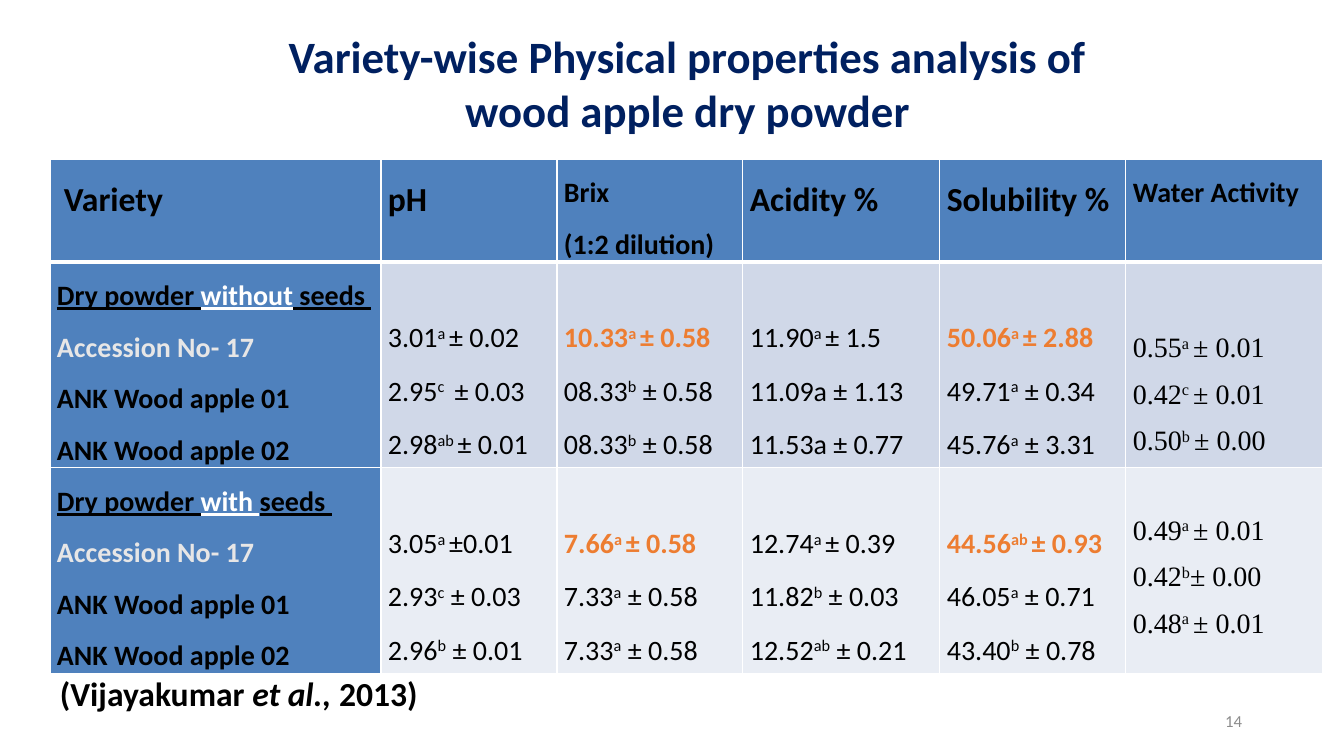
from dataclasses import dataclass

from lxml import etree
from pptx import Presentation
from pptx import util as u
from pptx.dml.color import RGBColor
from pptx.enum import text
from pptx.oxml import ns

EMU_PER_PX = 914400 / 100.8


@dataclass(frozen=True)
class Theme:
    font: str = "Calibri"
    serif: str = "Times New Roman"
    ink: str = "000000"
    white: str = "FFFFFF"
    navy: str = "002060"
    blue: str = "4F81BD"
    bands: tuple = ("D0D8E8", "E9EDF4")
    pale: str = "E7E6E6"
    orange: str = "ED7D31"
    grey: str = "8C8C8C"
    title: int = 32
    large: int = 24
    body: int = 20
    small: int = 12


THEME = Theme()
COLUMN_WIDTHS = (331, 176, 186, 197, 186, 197)
ROW_HEIGHTS = (101, 201, 201)
HEADERS = (
    (["Variety"], THEME.large, 14),
    (["pH"], THEME.large, 7),
    (["Brix", "(1:2 dilution)"], THEME.body, 7),
    (["Acidity %"], THEME.large, 7),
    (["Solubility %"], THEME.large, 7),
    (["Water Activity"], THEME.body, 7),
)
VARIETIES = (
    ("Accession No- 17", THEME.pale),
    ("ANK Wood apple 01", THEME.ink),
    ("ANK Wood apple 02", THEME.ink),
)
HIGHLIGHTED = (1, 3)
GROUPS = (
    (
        ("Dry powder ", "without", " seeds "),
        (
            ("3.01^a ^± 0.02", "2.95^c ^ ± 0.03", "2.98^ab ^± 0.01"),
            ("10.33^a ^± 0.58", "08.33^b^ ± 0.58", "08.33^b^ ± 0.58"),
            ("11.90^a ^± 1.5", "11.09a ± 1.13", "11.53a ± 0.77"),
            ("50.06^a ^± 2.88", "49.71^a^ ± 0.34", "45.76^a^ ± 3.31"),
        ),
        ("0.55^a ^± 0.01", "0.42^c ^± 0.01", "0.50^b ^± 0.00"),
        55,
    ),
    (
        ("Dry powder ", "with ", "seeds "),
        (
            ("3.05^a ^±0.01", "2.93^c^ ± 0.03", "2.96^b^ ± 0.01"),
            ("7.66^a ^± 0.58", "7.33^a^ ± 0.58", "7.33^a^ ± 0.58"),
            ("12.74^a ^± 0.39", "11.82^b^ ± 0.03", "12.52^ab^ ± 0.21"),
            ("44.56^ab ^± 0.93", "46.05^a^ ± 0.71", "43.40^b^ ± 0.78"),
        ),
        ("0.49^a ^± 0.01", "0.42^b^± 0.00", "0.48^a ^± 0.01"),
        32,
    ),
)


def px(length):
    return u.Emu(round(length * EMU_PER_PX))


def add_run(paragraph, words, size=THEME.body, color=THEME.ink, bold=False,
            font=THEME.font, italic=False, underline=False):
    run = paragraph.add_run()
    run.text = words
    run.font.name = font
    run.font.size = u.Pt(size)
    run.font.bold = bold
    run.font.italic = italic
    run.font.underline = underline
    run.font.color.rgb = RGBColor.from_string(color)
    return run


def add_measure(paragraph, value, **style):
    for index, part in enumerate(value.split("^")):
        run = add_run(paragraph, part, **style)
        if index % 2:
            run.font._element.set("baseline", "30000")


def add_paragraphs(frame, count, line_spacing, space_after=0):
    for index in range(count):
        paragraph = frame.add_paragraph() if index else frame.paragraphs[0]
        paragraph.line_spacing = line_spacing
        paragraph.space_after = u.Pt(space_after)
        yield paragraph


def format_cell(cell, fill, top=0, left=7, thick=None):
    properties = cell._tc.get_or_add_tcPr()
    for side in "LRTB":
        width = u.Pt(3 if side == thick else 1)
        line = etree.SubElement(properties, ns.qn("a:ln" + side), w=str(width))
        solid = etree.SubElement(line, ns.qn("a:solidFill"))
        etree.SubElement(solid, ns.qn("a:srgbClr"), val=THEME.white)
    cell.fill.solid()
    cell.fill.fore_color.rgb = RGBColor.from_string(fill)
    cell.margin_left, cell.margin_right = px(left), px(7)
    cell.margin_top, cell.margin_bottom = px(top), 0
    cell.vertical_anchor = text.MSO_ANCHOR.TOP


def fill_header(table):
    for column, (lines, size, left) in enumerate(HEADERS):
        cell = table.cell(0, column)
        format_cell(cell, THEME.blue, left=left, thick="B")
        paragraphs = add_paragraphs(cell.text_frame, len(lines), 1.5)
        for paragraph, line in zip(paragraphs, lines):
            add_run(paragraph, line, size, bold=True)


def fill_varieties(cell, heading, thick):
    format_cell(cell, THEME.blue, thick=thick)
    first, *others = add_paragraphs(cell.text_frame, 1 + len(VARIETIES), 1.5)
    for words, color in zip(heading, (THEME.ink, THEME.white, THEME.ink)):
        add_run(first, words, color=color, bold=True, underline=True)
    for paragraph, (name, color) in zip(others, VARIETIES):
        add_run(paragraph, name, color=color, bold=True)


def fill_group(table, row, heading, measures, water, water_top):
    thick = "T" if row == 1 else None
    band = THEME.bands[row - 1]
    fill_varieties(table.cell(row, 0), heading, thick)
    for index, values in enumerate(measures):
        cell = table.cell(row, index + 1)
        format_cell(cell, band, top=54, thick=thick)
        paragraphs = add_paragraphs(cell.text_frame, len(values), 1.15, 10)
        for line, (paragraph, value) in enumerate(zip(paragraphs, values)):
            strong = line == 0 and index in HIGHLIGHTED
            add_measure(paragraph, value, bold=strong,
                        color=THEME.orange if strong else THEME.ink)
    cell = table.cell(row, len(measures) + 1)
    format_cell(cell, band, top=water_top, thick=thick)
    paragraphs = add_paragraphs(cell.text_frame, len(water), 1.5)
    for paragraph, value in zip(paragraphs, water):
        add_measure(paragraph, value, font=THEME.serif)


def add_properties_table(slide, left, top):
    shape = slide.shapes.add_table(
        len(ROW_HEIGHTS), len(COLUMN_WIDTHS), px(left), px(top),
        px(sum(COLUMN_WIDTHS)), px(sum(ROW_HEIGHTS)))
    table = shape.table
    for column, width in zip(table.columns, COLUMN_WIDTHS):
        column.width = px(width)
    for row, height in zip(table.rows, ROW_HEIGHTS):
        row.height = px(height)
    fill_header(table)
    for row, group in enumerate(GROUPS, start=1):
        fill_group(table, row, *group)


def add_title(slide, left, top, width, height):
    title = slide.shapes.title
    title.left, title.top = px(left), px(top)
    title.width, title.height = px(width), px(height)
    frame = title.text_frame
    frame.word_wrap = True
    frame.auto_size = text.MSO_AUTO_SIZE.NONE
    frame.vertical_anchor = text.MSO_ANCHOR.TOP
    paragraph = frame.paragraphs[0]
    paragraph.alignment = text.PP_ALIGN.CENTER
    add_run(paragraph, "Variety-wise Physical properties analysis of wood apple dry powder",
            THEME.title, THEME.navy, bold=True)


def add_citation(slide, left, top, width, height):
    box = slide.shapes.add_textbox(px(left), px(top), px(width), px(height))
    box.text_frame.word_wrap = False
    paragraph = box.text_frame.paragraphs[0]
    for words, italic in (("(Vijayakumar ", False), ("et al., ", True), ("2013)", False)):
        add_run(paragraph, words, THEME.large, bold=True, italic=italic)


def add_page_number(slide, left, top, width, height):
    box = slide.shapes.add_textbox(px(left), px(top), px(width), px(height))
    box.text_frame.word_wrap = True
    box.text_frame.vertical_anchor = text.MSO_ANCHOR.MIDDLE
    paragraph = box.text_frame.paragraphs[0]
    paragraph.alignment = text.PP_ALIGN.RIGHT
    add_run(paragraph, "14", THEME.small, THEME.grey)


def main():
    presentation = Presentation()
    presentation.slide_width, presentation.slide_height = px(1344), px(756)
    slide = presentation.slides.add_slide(presentation.slide_layouts[5])
    add_title(slide, 255, 24, 865, 119)
    add_properties_table(slide, 50, 159)
    add_citation(slide, 50, 668, 381, 50)
    add_page_number(slide, 950, 701, 302, 40)
    presentation.save("out.pptx")


if __name__ == "__main__":
    main()
